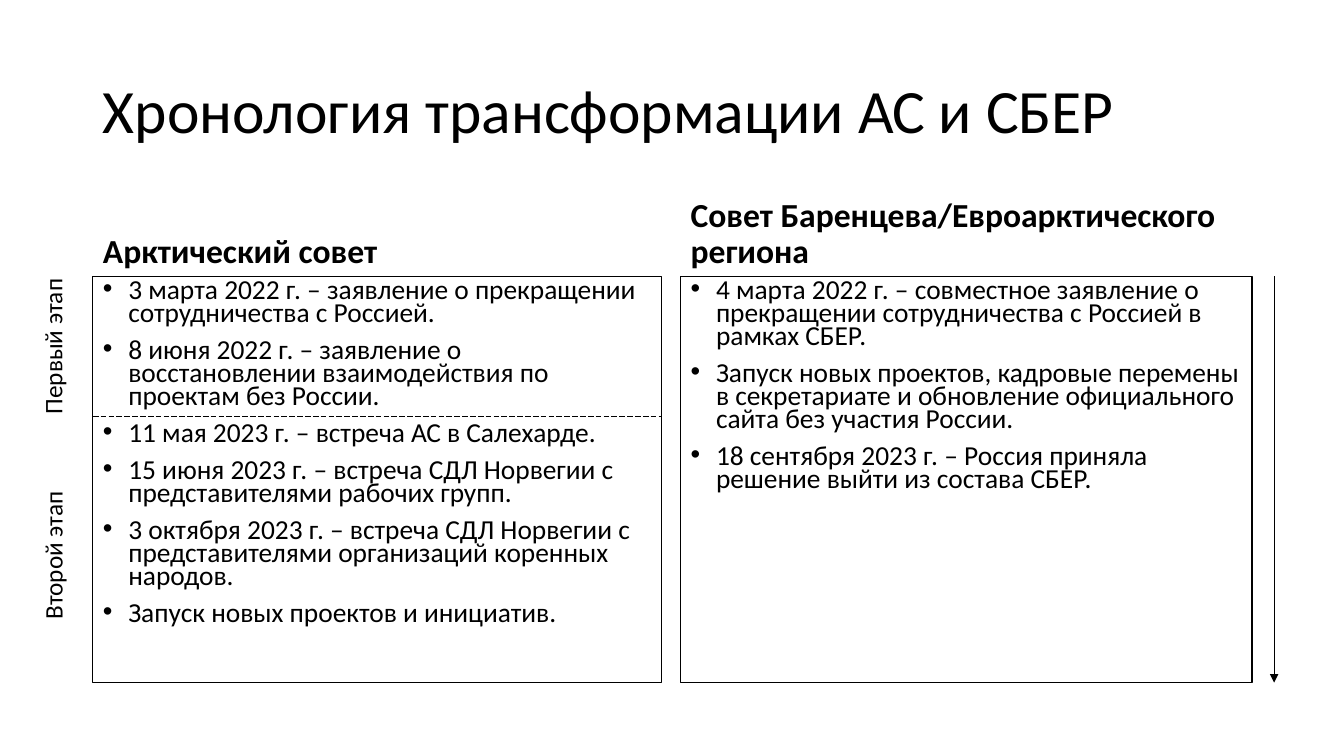
from dataclasses import dataclass

from lxml import etree
from pptx import Presentation
from pptx.dml.color import RGBColor
from pptx.enum.dml import MSO_LINE
from pptx.enum.shapes import MSO_CONNECTOR
from pptx.enum.text import MSO_ANCHOR, MSO_AUTO_SIZE, PP_ALIGN
from pptx.oxml.ns import qn
from pptx.slide import Slide
from pptx.text.text import TextFrame
from pptx.util import Cm, Pt

STRAIGHT = MSO_CONNECTOR.STRAIGHT
DASH = MSO_LINE.LONG_DASH
TOP, MIDDLE, BOTTOM = MSO_ANCHOR.TOP, MSO_ANCHOR.MIDDLE, MSO_ANCHOR.BOTTOM
NO_FIT, GROW = MSO_AUTO_SIZE.NONE, MSO_AUTO_SIZE.SHAPE_TO_FIT_TEXT
LEFT = PP_ALIGN.LEFT


@dataclass(frozen=True)
class Theme:
    font: str = "Calibri"
    ink: RGBColor = RGBColor(0, 0, 0)
    paper: RGBColor = RGBColor(255, 255, 255)
    title: float = 44
    head: float = 24
    list: float = 19.6
    label: float = 18
    thin: float = 0.5


@dataclass(frozen=True)
class Box:
    left: float
    top: float
    width: float
    height: float


@dataclass(frozen=True)
class Column:
    slot: int
    left: float
    width: float
    border: float
    head: str
    items: tuple[str, ...]


@dataclass(frozen=True)
class Label:
    text: str
    box: Box


@dataclass(frozen=True)
class Rule:
    start: tuple[float, float]
    end: tuple[float, float]
    dashed: bool = False
    arrow: bool = False


THEME = Theme()
EDGE = 2.34
HEAD_TOP, HEAD_HIGH = 4.67, 2.29
LIST_TOP, LIST_HIGH = 6.96, 10.24
LIST_END = LIST_TOP + LIST_HIGH
SPLIT = 10.49
ARROW = 32.11

COLUMNS = (
    Column(1, EDGE, 14.33, 0.75, "Арктический совет", (
        "3 марта 2022 г. – заявление о прекращении сотрудничества с Россией.",
        "8 июня 2022 г. – заявление о восстановлении взаимодействия по проектам без России.",
        "11 мая 2023 г. – встреча АС в Салехарде.",
        "15 июня 2023 г. – встреча СДЛ Норвегии с представителями рабочих групп.",
        "3 октября 2023 г. – встреча СДЛ Норвегии с представителями организаций коренных народов.",
        "Запуск новых проектов и инициатив.",
    )),
    Column(3, 17.15, 14.4, 1, "Совет Баренцева/Евроарктического региона", (
        "4 марта 2022 г. – совместное заявление о прекращении сотрудничества с Россией в рамках СБЕР.",
        "Запуск новых проектов, кадровые перемены в секретариате и обновление официального сайта без участия России.",
        "18 сентября 2023 г. – Россия приняла решение выйти из состава СБЕР.",
    )),
)
LABELS = (
    Label("Первый этап", Box(-0.66, 8.2, 3.96, 1.02)),
    Label("Второй этап", Box(-0.56, 13.46, 3.78, 1.02)),
)
RULES = (
    Rule((EDGE, SPLIT), (EDGE + COLUMNS[0].width, SPLIT), dashed=True),
    Rule((ARROW, LIST_TOP), (ARROW, LIST_END), arrow=True),
)


def style(frame: TextFrame, size: float, bold: bool = False,
          lines: float = 1, before: float = 0) -> None:
    for para in frame.paragraphs:
        para.alignment = LEFT
        para.line_spacing = lines
        para.space_before = Pt(before)
        for run in para.runs:
            run.font.name = THEME.font
            run.font.size = Pt(size)
            run.font.bold = bold
            run.font.color.rgb = THEME.ink


def fill_slot(slide: Slide, slot: int, box: Box, text: str, anchor: MSO_ANCHOR):
    shape = slide.placeholders[slot]
    shape.left, shape.top = Cm(box.left), Cm(box.top)
    shape.width, shape.height = Cm(box.width), Cm(box.height)
    frame = shape.text_frame
    frame.text = text
    frame.word_wrap = True
    frame.auto_size = NO_FIT
    frame.vertical_anchor = anchor
    return shape


def add_bullets(frame: TextFrame) -> None:
    for para in frame.paragraphs:
        props = para._p.get_or_add_pPr()
        props.set("marL", str(Cm(0.64)))
        props.set("indent", str(Cm(-0.64)))
        etree.SubElement(props, qn("a:buFont")).set("typeface", "Arial")
        etree.SubElement(props, qn("a:buChar")).set("char", "•")


def draw_column(slide: Slide, col: Column) -> None:
    place = Box(col.left, HEAD_TOP, col.width, HEAD_HIGH)
    head = fill_slot(slide, col.slot, place, col.head, BOTTOM)
    style(head.text_frame, THEME.head, bold=True, lines=0.9, before=10)
    place = Box(col.left, LIST_TOP, col.width, LIST_HIGH)
    body = fill_slot(slide, col.slot + 1, place, "\n".join(col.items), TOP)
    style(body.text_frame, THEME.list, lines=0.7, before=10)
    add_bullets(body.text_frame)
    body.fill.solid()
    body.fill.fore_color.rgb = THEME.paper
    body.line.color.rgb = THEME.ink
    body.line.width = Pt(col.border)


def draw_label(slide: Slide, label: Label) -> None:
    box = label.box
    shape = slide.shapes.add_textbox(
        Cm(box.left), Cm(box.top), Cm(box.width), Cm(box.height))
    shape.rotation = 270
    frame = shape.text_frame
    frame.text = label.text
    frame.word_wrap = False
    frame.auto_size = GROW
    style(frame, THEME.label)


def draw_rule(slide: Slide, rule: Rule) -> None:
    ends = [Cm(value) for value in rule.start + rule.end]
    line = slide.shapes.add_connector(STRAIGHT, *ends)
    line.line.color.rgb = THEME.ink
    line.line.width = Pt(THEME.thin)
    if rule.dashed:
        line.line.dash_style = DASH
    if rule.arrow:
        tip = etree.SubElement(line.line._get_or_add_ln(), qn("a:tailEnd"))
        tip.set("type", "triangle")
    etree.SubElement(line._element.spPr, qn("a:effectLst"))


def main() -> None:
    deck = Presentation()
    deck.slide_width, deck.slide_height = Cm(33.87), Cm(19.05)
    slide = deck.slides.add_slide(deck.slide_layouts[4])
    title = fill_slot(slide, 0, Box(EDGE, 1.02, 29.21, 3.68),
                      "Хронология трансформации АС и СБЕР", MIDDLE)
    style(title.text_frame, THEME.title, lines=0.9)
    for col in COLUMNS:
        draw_column(slide, col)
    for label in LABELS:
        draw_label(slide, label)
    for rule in RULES:
        draw_rule(slide, rule)
    deck.save("out.pptx")


if __name__ == "__main__":
    main()
